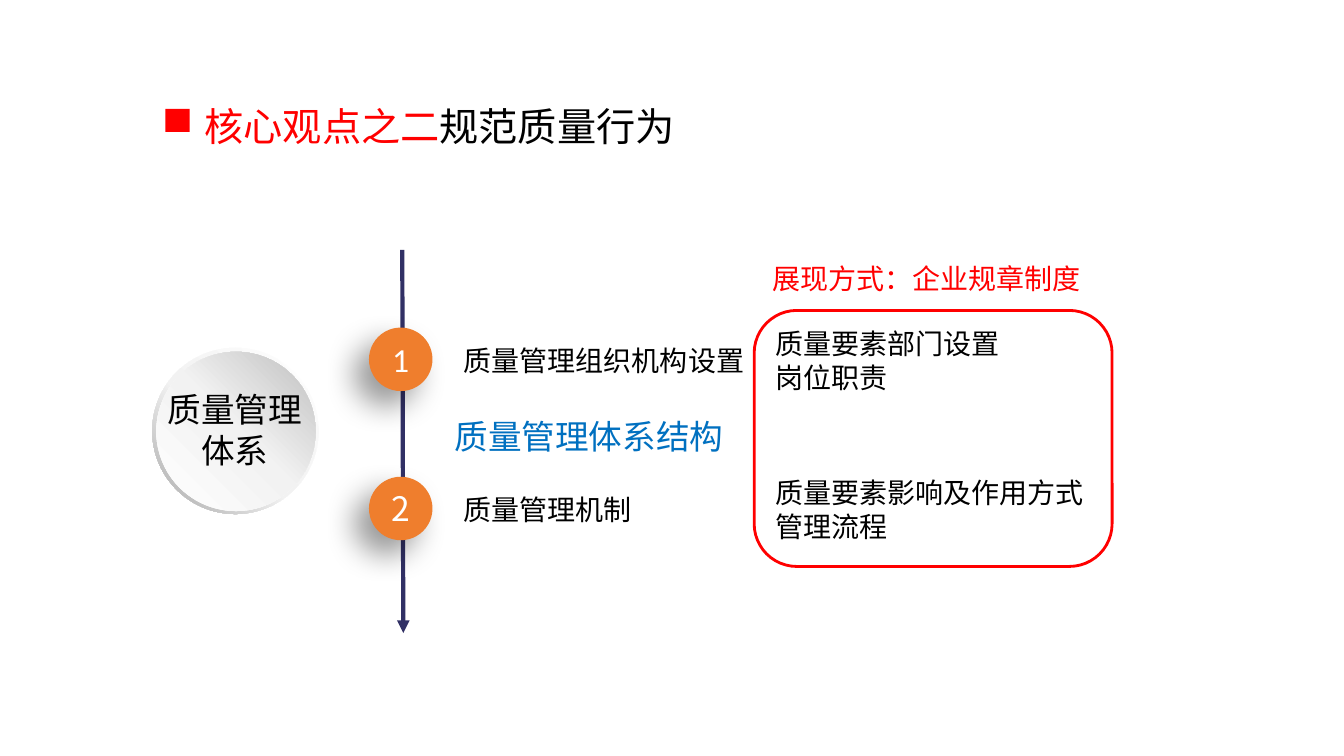
import copy

import lxml.etree
import pptx
import pptx.dml.color
import pptx.enum.dml
import pptx.enum.shapes
import pptx.enum.text
import pptx.oxml.ns
import pptx.util

RGB = pptx.dml.color.RGBColor
SHAPE = pptx.enum.shapes.MSO_SHAPE
ALIGN = pptx.enum.text.PP_ALIGN
ANCHOR = pptx.enum.text.MSO_ANCHOR
qn = pptx.oxml.ns.qn

RED = RGB(0xFF, 0x00, 0x00)
BLACK = RGB(0x00, 0x00, 0x00)
WHITE = RGB(0xFF, 0xFF, 0xFF)
BLUE = RGB(0x00, 0x70, 0xC0)
ORANGE = RGB(0xEF, 0x7E, 0x2D)
NAVY = RGB(0x31, 0x30, 0x65)
PALE_GREY = RGB(0xF2, 0xF2, 0xF2)
MID_GREY = RGB(0xBF, 0xBF, 0xBF)
DARK_GREY = RGB(0xA6, 0xA6, 0xA6)

CJK = "Noto Sans CJK SC"
LATIN = "Calibri"
EMU_PER_PX = 9144


def px(*lengths):
    return [pptx.util.Emu(length * EMU_PER_PX) for length in lengths]


class SlideBuilder:
    """Holds the style and the current slide, and adds its elements."""

    def __init__(self, presentation):
        self.slide = presentation.slides.add_slide(presentation.slide_layouts[5])
        self.shapes = self.slide.shapes

    def set_font(self, paragraph, size, color=None, font=CJK):
        paragraph.font.size = pptx.util.Pt(size)
        paragraph.font.name = font
        if color is not None:
            paragraph.font.color.rgb = color
        properties = paragraph._p.pPr.find(qn("a:defRPr"))
        lxml.etree.SubElement(properties, qn("a:ea"), typeface=CJK)

    def title(self, box, parts, size):
        title = self.shapes.title
        title.left, title.top, title.width, title.height = px(*box)
        frame = title.text_frame
        frame.auto_size = pptx.enum.text.MSO_AUTO_SIZE.NONE
        frame.vertical_anchor = ANCHOR.TOP
        paragraph = frame.paragraphs[0]
        paragraph.alignment = ALIGN.LEFT
        paragraph.line_spacing = 1.3
        for words, color in parts:
            run = paragraph.add_run()
            run.text = words
            run.font.color.rgb = color
        self.set_font(paragraph, size)

    def fill_text(self, frame, lines, size, color, font=CJK, align=ALIGN.LEFT):
        frame.word_wrap = True
        frame.text = "\n".join(lines)
        for paragraph in frame.paragraphs:
            paragraph.alignment = align
            self.set_font(paragraph, size, color, font)

    def text(self, box, lines, size=20, color=BLACK, anchor=ANCHOR.TOP,
             align=ALIGN.LEFT, inset=True):
        frame = self.shapes.add_textbox(*px(*box)).text_frame
        frame.vertical_anchor = anchor
        if not inset:
            frame.margin_left = frame.margin_right = 0
            frame.margin_top = frame.margin_bottom = 0
        self.fill_text(frame, lines, size, color, align=align)

    def shape(self, kind, box, fill=None, line=None):
        shape = self.shapes.add_shape(kind, *px(*box))
        shape.shadow.inherit = False
        if fill is None:
            shape.fill.background()
        else:
            shape.fill.solid()
            shape.fill.fore_color.rgb = fill
        if line is None:
            shape.line.fill.background()
        else:
            shape.line.color.rgb = line
            shape.line.width = pptx.util.Pt(2)
        return shape

    def gradient(self, shape, stops, clockwise_angle):
        shape.fill.gradient()
        shape.fill.gradient_angle = 360 - clockwise_angle
        stop_list = shape._element.spPr.find(".//" + qn("a:gsLst"))
        stop_list.append(copy.deepcopy(stop_list[0]))
        for stop, (position, color) in zip(shape.fill.gradient_stops, stops):
            stop.position = position
            stop.color.rgb = color

    def badge(self, box, number, font):
        badge = self.shape(SHAPE.OVAL, box, ORANGE)
        effects = badge._element.spPr.find(qn("a:effectLst"))
        shadow = lxml.etree.SubElement(
            effects, qn("a:outerShdw"), blurRad=str(pptx.util.Pt(22)),
            dist=str(pptx.util.Pt(15)), dir=str(135 * 60000),
            algn="tr", rotWithShape="0")
        tint = lxml.etree.SubElement(shadow, qn("a:srgbClr"), val=str(BLACK))
        lxml.etree.SubElement(tint, qn("a:alpha"), val="40000")
        badge.text_frame.vertical_anchor = ANCHOR.MIDDLE
        self.fill_text(badge.text_frame, [number], 24, WHITE, font, ALIGN.CENTER)

    def arrow(self, ends, color):
        arrow = self.shapes.add_connector(
            pptx.enum.shapes.MSO_CONNECTOR.STRAIGHT, *px(*ends))
        arrow.line.color.rgb = color
        arrow.line.width = pptx.util.Pt(3)
        outline = arrow._element.spPr.find(qn("a:ln"))
        lxml.etree.SubElement(outline, qn("a:tailEnd"), type="triangle")
        lxml.etree.SubElement(arrow._element.spPr, qn("a:effectLst"))


def main():
    presentation = pptx.Presentation()
    presentation.slide_width, presentation.slide_height = px(1333, 750)
    page = SlideBuilder(presentation)

    page.shape(SHAPE.RECTANGLE, (164, 108, 24, 23), RED)
    page.arrow((399, 248, 400, 628), NAVY)
    page.title((193, 83, 629, 67),
               [("核心观点之二", RED), ("规范质量行为", BLACK)], 28)

    rim = page.shape(SHAPE.DONUT, (151, 345, 165, 165), WHITE)
    rim.adjustments[0] = 0.05
    page.gradient(rim, [(0, WHITE), (0.55, PALE_GREY), (1, DARK_GREY)], 135)
    disc = page.shape(SHAPE.OVAL, (155, 349, 158, 158), WHITE)
    page.gradient(disc, [(0, WHITE), (0.51, PALE_GREY), (1, MID_GREY)], 315)
    page.text((163, 386, 140, 81), ["质量管理体系"], 24,
              align=ALIGN.CENTER, inset=False)

    page.text((441, 408, 484, 50), ["质量管理体系结构"], 24, BLUE)

    topics = [
        ("质量管理组织机构设置", ["质量要素部门设置", "岗位职责"], LATIN),
        ("质量管理机制", ["质量要素影响及作用方式", "管理流程"], CJK),
    ]
    for index, (topic, details, number_font) in enumerate(topics):
        top = 325 + 148 * index
        page.badge((366, top, 63, 63), str(index + 1), number_font)
        page.text((450, top + 10, 332, 44), [topic], anchor=ANCHOR.MIDDLE)
        page.text((759, top - 6, 439, 77), details)

    page.shape(SHAPE.FLOWCHART_ALTERNATE_PROCESS, (748, 308, 355, 254), line=RED)
    page.text((756, 255, 339, 77), ["展现方式：企业规章制度"], color=RED)

    presentation.save("out.pptx")


if __name__ == "__main__":
    main()
